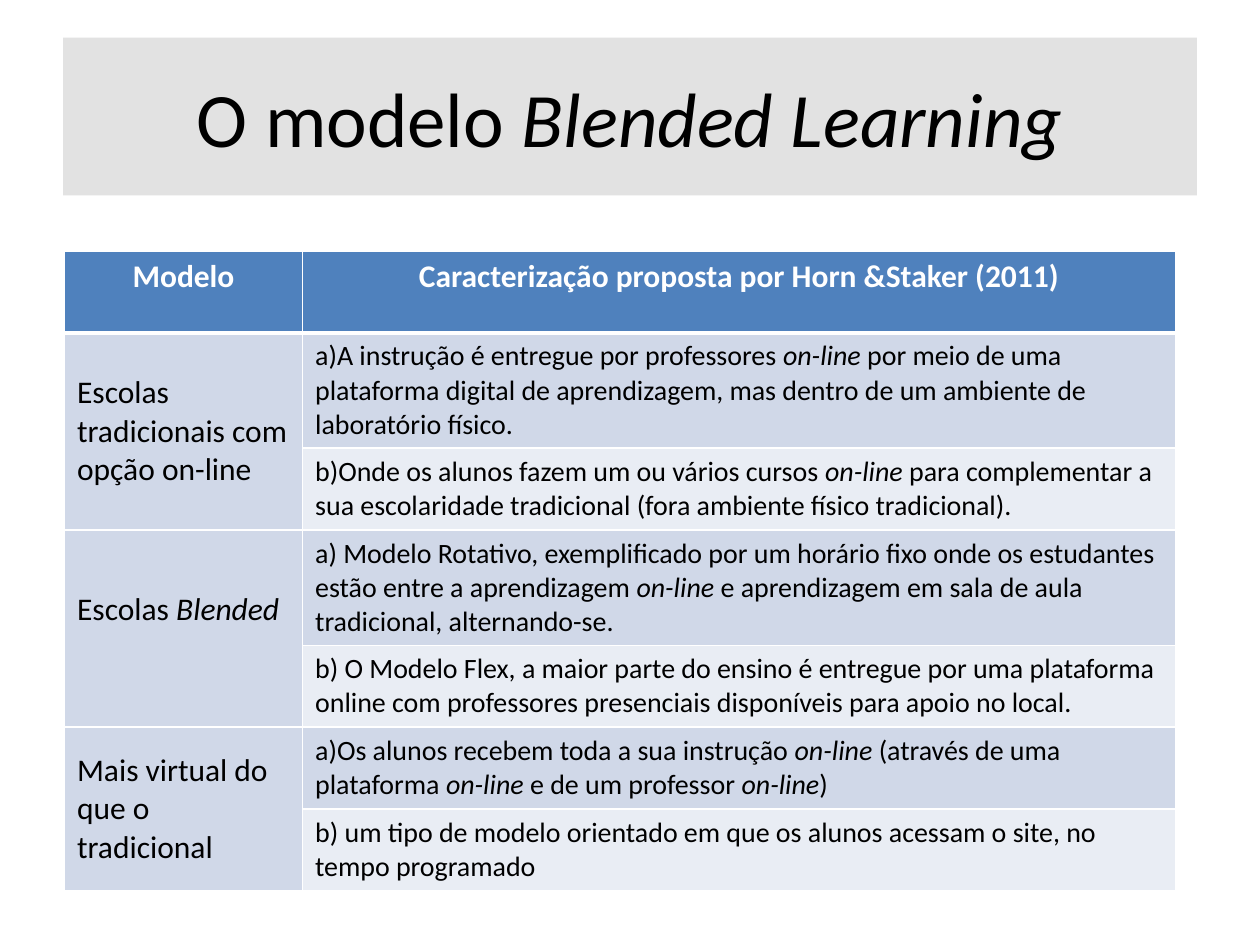
from dataclasses import dataclass

import pptx
import pptx.dml.color
import pptx.enum.text
import pptx.oxml
import pptx.oxml.ns
import pptx.util
from pptx.util import Cm

COLORS = {
    "banner": "D9D9D9",
    "header": "4F81BD",
    "band_dark": "D0D8E8",
    "band_light": "E9EDF4",
    "white": "FFFFFF",
    "black": "000000",
}
CENTER = pptx.enum.text.PP_ALIGN.CENTER
LEFT = pptx.enum.text.PP_ALIGN.LEFT
TOP = pptx.enum.text.MSO_ANCHOR.TOP
MIDDLE = pptx.enum.text.MSO_ANCHOR.MIDDLE
ROW_HEIGHT = Cm(1.65)
COLUMN_WIDTHS = (Cm(4.8), Cm(17.6))


@dataclass
class SchoolModel:
    """A model and its two descriptions; asterisks enclose italics."""
    label: str
    traits: tuple[str, str]
    bottom_margin: float = 0.13


MODELS = [
    SchoolModel("Escolas tradicionais com opção on-line", (
        "a)A instrução é entregue por professores *on-line* por meio de uma "
        "plataforma digital de aprendizagem, mas dentro de um ambiente de "
        "laboratório físico.",
        "b)Onde os alunos fazem um ou vários cursos *on-line* para complementar "
        "a sua escolaridade tradicional (fora ambiente físico tradicional).")),
    SchoolModel("Escolas *Blended*", (
        "a) Modelo Rotativo, exemplificado por um horário fixo onde os "
        "estudantes estão entre a aprendizagem *on-line* e aprendizagem em "
        "sala de aula tradicional, alternando-se.",
        "b) O Modelo Flex, a maior parte do ensino é entregue por uma "
        "plataforma online com professores presenciais disponíveis para apoio "
        "no local."), bottom_margin=0.9),
    SchoolModel("Mais virtual do que o tradicional", (
        "a)Os alunos recebem toda a sua instrução *on-line* (através de uma "
        "plataforma *on-line* e de um professor *on-line*)",
        "b) um tipo de modelo orientado em que os alunos acessam o site, no "
        "tempo programado")),
]


def rgb(name: str) -> pptx.dml.color.RGBColor:
    return pptx.dml.color.RGBColor.from_string(COLORS[name])


def write_text(frame, text: str, size: float, color: str, align, bold=False) -> None:
    paragraph = frame.paragraphs[0]
    paragraph.alignment = align
    for index, part in enumerate(text.split("*")):
        if not part:
            continue
        run = paragraph.add_run()
        run.text = part
        font_format = {"name": "Calibri", "size": pptx.util.Pt(size),
                       "bold": bold, "italic": index % 2 == 1}
        for attribute, value in font_format.items():
            setattr(run.font, attribute, value)
        run.font.color.rgb = rgb(color)


def set_borders(cell, top: float = 1, bottom: float = 1) -> None:
    properties = cell._tc.get_or_add_tcPr()
    widths = {"lnL": 1, "lnR": 1, "lnT": top, "lnB": bottom}
    for position, (side, width) in enumerate(widths.items()):
        properties.insert(position, pptx.oxml.parse_xml(
            f'<a:{side} {pptx.oxml.ns.nsdecls("a")} w="{pptx.util.Pt(width)}">'
            f'<a:solidFill><a:srgbClr val="{COLORS["white"]}"/></a:solidFill>'
            f'</a:{side}>'))


def fill_cell(cell, fill: str, text: str, size: float, color: str = "black",
              align=LEFT, anchor=TOP, bold: bool = False) -> None:
    cell.fill.solid()
    cell.fill.fore_color.rgb = rgb(fill)
    cell.vertical_anchor = anchor
    write_text(cell.text_frame, text, size, color, align, bold)


def add_title(slide) -> None:
    title = slide.shapes.title
    place = {"left": Cm(1.27), "top": Cm(0.76),
             "width": Cm(22.86), "height": Cm(3.18)}
    for attribute, value in place.items():
        setattr(title, attribute, value)
    title.fill.solid()
    title.fill.fore_color.rgb = rgb("banner")
    banner_color = title._element.spPr.find(
        f'.//{pptx.oxml.ns.qn("a:srgbClr")}')
    banner_color.append(pptx.oxml.parse_xml(
        f'<a:alpha {pptx.oxml.ns.nsdecls("a")} val="75000"/>'))
    title.text_frame.vertical_anchor = MIDDLE
    write_text(title.text_frame, "O modelo *Blended Learning*", 44, "black", CENTER)


def add_models_table(slide) -> None:
    row_count = 1 + 2 * len(MODELS)
    table = slide.shapes.add_table(
        row_count, 2, Cm(1.3), Cm(5.06),
        sum(COLUMN_WIDTHS), ROW_HEIGHT * row_count).table
    for column, width in zip(table.columns, COLUMN_WIDTHS):
        column.width = width
    for row in table.rows:
        row.height = ROW_HEIGHT

    # Header row
    headings = ("Modelo", "Caracterização proposta por Horn &Staker (2011)")
    for column, heading in enumerate(headings):
        fill_cell(table.cell(0, column), "header", heading, 18, "white",
                  CENTER, bold=True)

    # Two rows per model, with the label spanning both
    for index, model in enumerate(MODELS):
        first = 1 + 2 * index
        label = table.cell(first, 0)
        label.merge(table.cell(first + 1, 0))
        fill_cell(label, "band_dark", model.label, 18, anchor=MIDDLE)
        label.margin_bottom = Cm(model.bottom_margin)
        for offset, (fill, trait) in enumerate(
                zip(("band_dark", "band_light"), model.traits)):
            fill_cell(table.cell(first + offset, 1), fill, trait, 16)

    # White rules, thicker below the header
    for row in range(row_count):
        for column in range(2):
            set_borders(table.cell(row, column), top=3 if row == 1 else 1,
                        bottom=3 if row == 0 else 1)


def main() -> None:
    presentation = pptx.Presentation()
    presentation.slide_width = Cm(25.4)
    presentation.slide_height = Cm(19.05)
    slide = presentation.slides.add_slide(presentation.slide_layouts[5])
    add_title(slide)
    add_models_table(slide)
    presentation.save("out.pptx")


if __name__ == "__main__":
    main()
